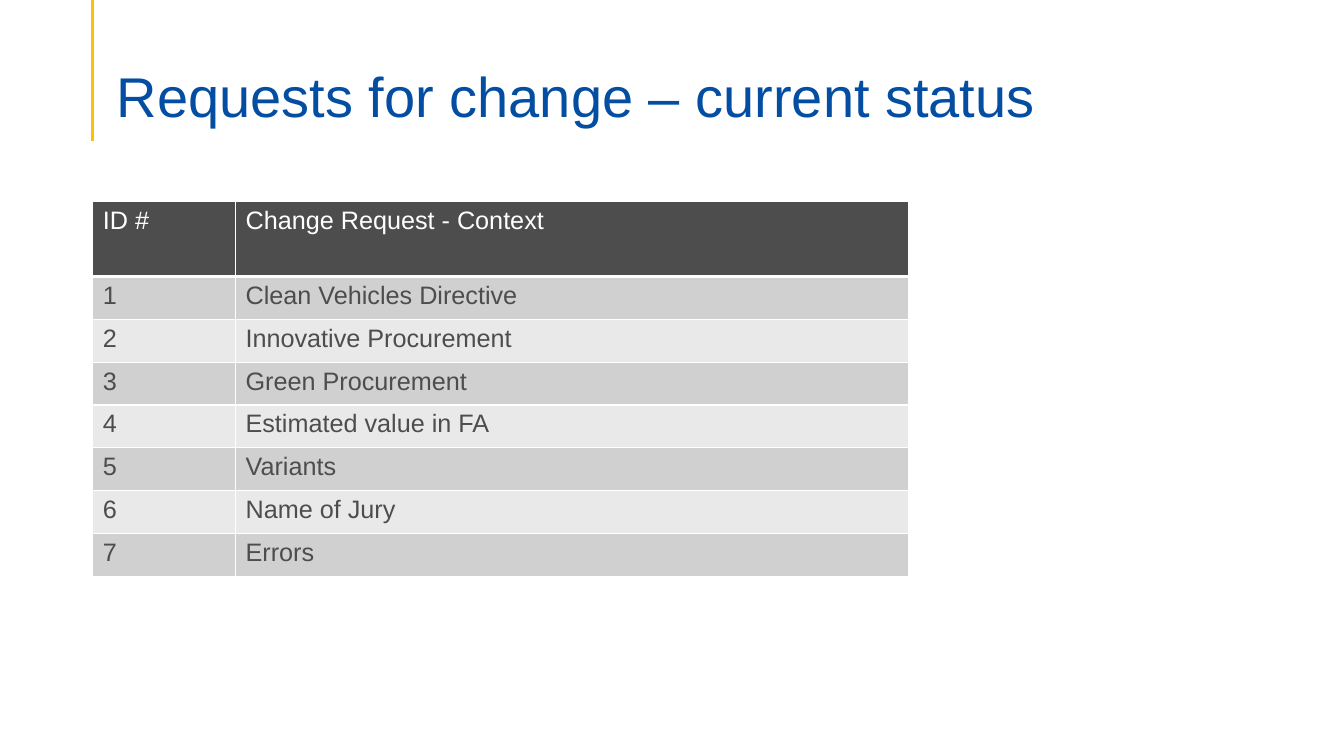
from dataclasses import dataclass

from lxml.etree import SubElement
from pptx import Presentation
from pptx.dml.color import RGBColor as Color
from pptx.enum.shapes import MSO_CONNECTOR as Connector
from pptx.enum.text import MSO_ANCHOR as Anchor, PP_ALIGN as Align
from pptx.oxml.ns import qn
from pptx.util import Inches, Pt


@dataclass(frozen=True)
class Theme:
    font: str = "Arial"
    title_size: int = 40
    table_size: int = 18
    blue: str = "034EA2"
    gold: str = "FFC000"
    dark: str = "4D4D4D"
    white: str = "FFFFFF"
    bands: tuple = ("D0D0D0", "E9E9E9")
    rule_width: float = 2.25
    border_width: int = 1
    header_border_width: int = 3


THEME = Theme()
WIDTH, HEIGHT = 13.33, 7.5
MARGIN = 0.92
HEADER = ("ID #", "Change Request - Context")
REQUESTS = (
    "Clean Vehicles Directive",
    "Innovative Procurement",
    "Green Procurement",
    "Estimated value in FA",
    "Variants",
    "Name of Jury",
    "Errors",
)


def write(frame, text, *, size, color, bold=False, spacing=None):
    para = frame.paragraphs[0]
    para.alignment = Align.LEFT
    para.line_spacing = spacing
    span = para.add_run()
    span.text = text
    span.font.name = THEME.font
    span.font.size = Pt(size)
    span.font.bold = bold
    span.font.color.rgb = Color.from_string(color)


def add_borders(cell, *, color, width, bottom_width):
    properties = cell._tc.get_or_add_tcPr()
    for side in "LRTB":
        points = bottom_width if side == "B" else width
        line = SubElement(properties, qn(f"a:ln{side}"), w=str(Pt(points)))
        fill = SubElement(line, qn("a:solidFill"))
        SubElement(fill, qn("a:srgbClr"), val=color)


def add_rule(page, x, top, bottom):
    rule = page.shapes.add_connector(
        Connector.STRAIGHT, Inches(x), Inches(top), Inches(x), Inches(bottom)
    )
    rule.line.color.rgb = Color.from_string(THEME.gold)
    rule.line.width = Pt(THEME.rule_width)
    SubElement(rule._element.spPr, qn("a:effectLst"))


def place_title(page, text, left, top, width, height):
    title = page.shapes.title
    title.left, title.top = Inches(left), Inches(top)
    title.width, title.height = Inches(width), Inches(height)
    frame = title.text_frame
    frame.word_wrap = True
    frame.vertical_anchor = Anchor.MIDDLE
    frame.margin_left = frame.margin_right = Inches(0.1)
    frame.margin_top, frame.margin_bottom = Inches(0.05), 0
    write(frame, text, size=THEME.title_size, color=THEME.blue, spacing=0.9)


def add_request_table(page, left, top, width, height):
    rows = [HEADER, *((str(i), name) for i, name in enumerate(REQUESTS, 1))]
    header_height = height * 0.2
    row_height = (height - header_height) / len(REQUESTS)
    id_width = width * 0.175
    table = page.shapes.add_table(
        len(rows), len(HEADER), Inches(left), Inches(top), Inches(width), Inches(height)
    ).table
    for column, share in zip(table.columns, (id_width, width - id_width)):
        column.width = Inches(share)
    for i, values in enumerate(rows):
        is_header = i == 0
        table.rows[i].height = Inches(header_height if is_header else row_height)
        for cell, text in zip(table.rows[i].cells, values):
            add_borders(
                cell,
                color=THEME.white,
                width=THEME.border_width,
                bottom_width=THEME.header_border_width if is_header else THEME.border_width,
            )
            cell.fill.solid()
            fill = THEME.dark if is_header else THEME.bands[(i - 1) % 2]
            cell.fill.fore_color.rgb = Color.from_string(fill)
            write(
                cell.text_frame,
                text,
                size=THEME.table_size,
                color=THEME.white if is_header else THEME.dark,
            )


def build_status_page(deck):
    page = deck.slides.add_slide(deck.slide_layouts[5])
    add_rule(page, MARGIN, 0, 1.4)
    add_request_table(page, MARGIN, 2, 8.09, 3.72)
    place_title(page, "Requests for change – current status", 1.06, 0.53, 11.5, 0.86)


def main():
    deck = Presentation()
    deck.slide_width, deck.slide_height = Inches(WIDTH), Inches(HEIGHT)
    build_status_page(deck)
    deck.save("out.pptx")


if __name__ == "__main__":
    main()
